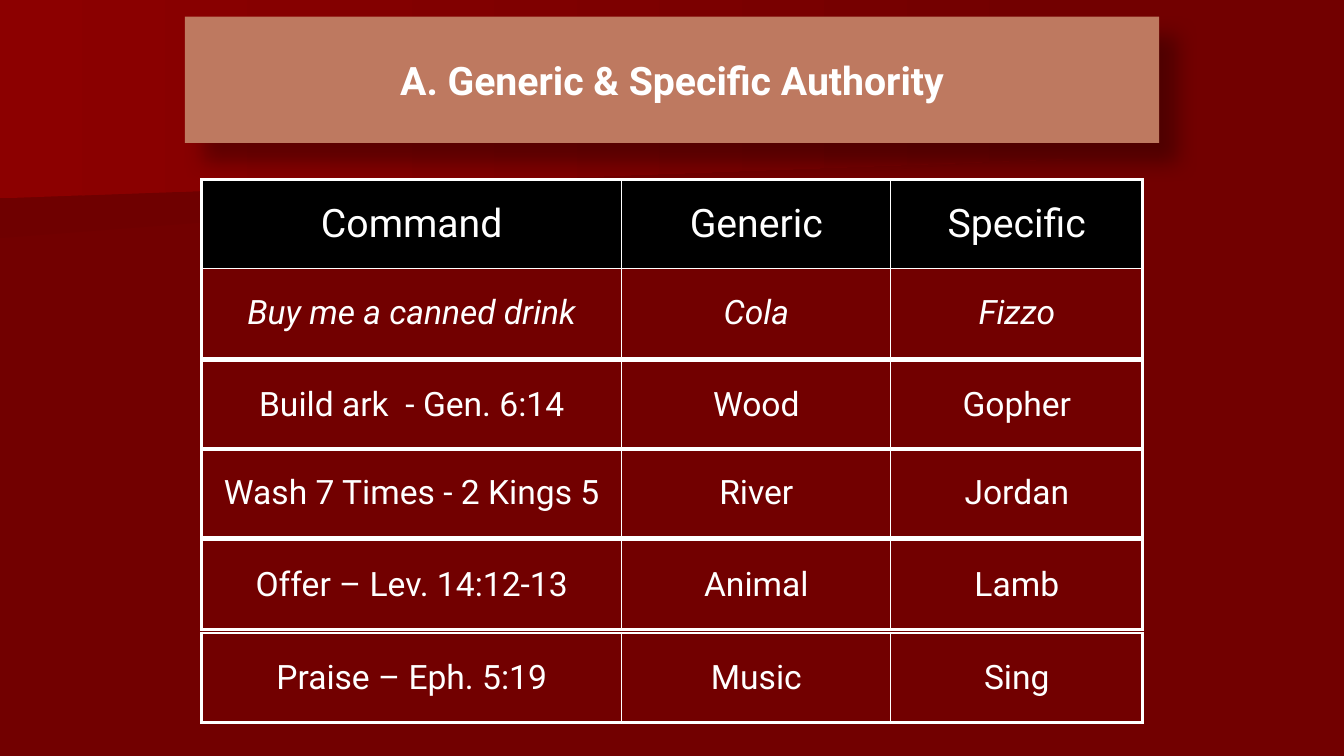
from lxml import etree
from pptx import Presentation
from pptx.dml.color import RGBColor
from pptx.enum.text import MSO_ANCHOR, MSO_AUTO_SIZE, PP_ALIGN
from pptx.oxml.ns import qn
from pptx.util import Cm, Pt

MIDDLE = MSO_ANCHOR.MIDDLE
CENTER = PP_ALIGN.CENTER
NO_AUTOFIT = MSO_AUTO_SIZE.NONE

WHITE = RGBColor(0xFF, 0xFF, 0xFF)
BLACK = RGBColor(0x00, 0x00, 0x00)
MAROON = RGBColor(0x72, 0x00, 0x00)
DARK_MAROON = RGBColor(0x6F, 0x00, 0x00)
BRIGHT_RED = RGBColor(0x8C, 0x00, 0x00)
CLAY = RGBColor(0xBE, 0x79, 0x60)

FONT = "Roboto"
TITLE_ONLY = 5
TABLE_LEFT = 5.08
COLUMN_WIDTHS = (10.59, 6.78, 6.35)
ROW_HEIGHT = 2.25
THICK, THIN = Pt(2.25), Pt(1)

BANDS = (
    (DARK_MAROON, ((26.34, 3.89), (0, 5.51), (0, 2.57), (26.39, 2.57), (26.34, 3.25))),
    (BRIGHT_RED, ((26.82, 4.11), (0, 5.28), (0, 0), (26.82, 0))),
)
HEADER = ("Command", "Generic", "Specific")
EXAMPLE = ("Buy me a canned drink", "Cola", "Fizzo")
TABLES = (
    (4.52, (HEADER, EXAMPLE)),
    (9.09, (("Build ark  - Gen. 6:14", "Wood", "Gopher"),)),
    (11.3, (("Wash 7 Times - 2 Kings 5", "River", "Jordan"),)),
    (13.61, (("Offer – Lev. 14:12-13", "Animal", "Lamb"),)),
    (15.95, (("Praise – Eph. 5:19", "Music", "Sing"),)),
)


def add_band(slide, color, points):
    """Add a backdrop band fading from a colour into the background."""
    builder = slide.shapes.build_freeform(*points[0], scale=Cm(1))
    builder.add_line_segments(points[1:], close=True)
    shape = builder.convert_to_shape()
    shape.shadow.inherit = False
    shape.line.fill.background()
    shape.fill.gradient()
    shape.fill.gradient_angle = 0
    for stop, stop_color in zip(shape.fill.gradient_stops, (color, MAROON)):
        stop.color.rgb = stop_color


def write_text(text_frame, text, size, bold=False, italic=False):
    """Write one centred white run and return its paragraph."""
    paragraph = text_frame.paragraphs[0]
    paragraph.alignment = CENTER
    run = paragraph.add_run()
    run.text = text
    run.font.name = FONT
    run.font.size = Pt(size)
    run.font.bold = bold
    run.font.italic = italic
    run.font.color.rgb = WHITE
    return paragraph


def add_shadow(shape):
    """Give a shape a soft shadow to the lower right."""
    effects = etree.SubElement(shape.element.spPr, qn("a:effectLst"))
    shadow = etree.SubElement(
        effects, qn("a:outerShdw"), blurRad=str(Pt(15)), dist=str(Pt(18)),
        dir="2700000", algn="tl", rotWithShape="0",
    )
    color = etree.SubElement(shadow, qn("a:srgbClr"), val=str(BLACK))
    etree.SubElement(color, qn("a:alpha"), val="30000")


def format_title(title, text):
    """Turn the title placeholder into an ellipse above the backdrop."""
    title.element.getparent().append(title.element)
    title.left, title.top = Cm(4.66), Cm(0.42)
    title.width, title.height = Cm(24.55), Cm(3.18)
    geometry = etree.SubElement(title.element.spPr, qn("a:prstGeom"), prst="ellipse")
    etree.SubElement(geometry, qn("a:avLst"))
    title.fill.solid()
    title.fill.fore_color.rgb = CLAY
    title.line.fill.background()
    add_shadow(title)
    text_frame = title.text_frame
    text_frame.auto_size = NO_AUTOFIT
    text_frame.word_wrap = False
    text_frame.vertical_anchor = MIDDLE
    write_text(text_frame, text, 28, bold=True)


def set_borders(cell, outer_sides):
    """Draw white borders, thick on the outer sides of the table."""
    properties = cell._tc.get_or_add_tcPr()
    for side in "LRTB":
        width = THICK if side in outer_sides else THIN
        line = etree.SubElement(properties, qn(f"a:ln{side}"), w=str(width))
        fill = etree.SubElement(line, qn("a:solidFill"))
        etree.SubElement(fill, qn("a:srgbClr"), val=str(WHITE))


def format_cell(cell, text, is_header, is_example, outer_sides):
    """Fill in one table cell."""
    set_borders(cell, outer_sides)
    if is_header:
        cell.fill.solid()
        cell.fill.fore_color.rgb = BLACK
    else:
        cell.fill.background()
    cell.vertical_anchor = MIDDLE
    size = 28 if is_header else 24
    paragraph = write_text(cell.text_frame, text, size, italic=is_example)
    paragraph.space_before = Pt(size * 0.2)


def add_command_table(slide, top, rows):
    """Add a table of commands with generic and specific examples."""
    frame = slide.shapes.add_table(
        len(rows), len(COLUMN_WIDTHS), Cm(TABLE_LEFT), Cm(top),
        Cm(sum(COLUMN_WIDTHS)), Cm(ROW_HEIGHT * len(rows)),
    )
    table = frame.table
    table.first_row = False
    table.horz_banding = False
    for column, width in zip(table.columns, COLUMN_WIDTHS):
        column.width = Cm(width)
    last_row, last_column = len(rows) - 1, len(COLUMN_WIDTHS) - 1
    for i, row in enumerate(rows):
        for j, text in enumerate(row):
            edges = {"L": j == 0, "R": j == last_column, "T": i == 0, "B": i == last_row}
            outer_sides = [side for side, is_outer in edges.items() if is_outer]
            format_cell(table.cell(i, j), text, row is HEADER, row is EXAMPLE, outer_sides)


def main():
    """Build the slide and save the presentation."""
    presentation = Presentation()
    presentation.slide_width, presentation.slide_height = Cm(33.87), Cm(19.05)
    slide = presentation.slides.add_slide(presentation.slide_layouts[TITLE_ONLY])
    slide.background.fill.solid()
    slide.background.fill.fore_color.rgb = MAROON
    for color, points in BANDS:
        add_band(slide, color, points)
    format_title(slide.shapes.title, "A. Generic & Specific Authority")
    for top, rows in TABLES:
        add_command_table(slide, top, rows)
    presentation.save("out.pptx")


if __name__ == "__main__":
    main()
